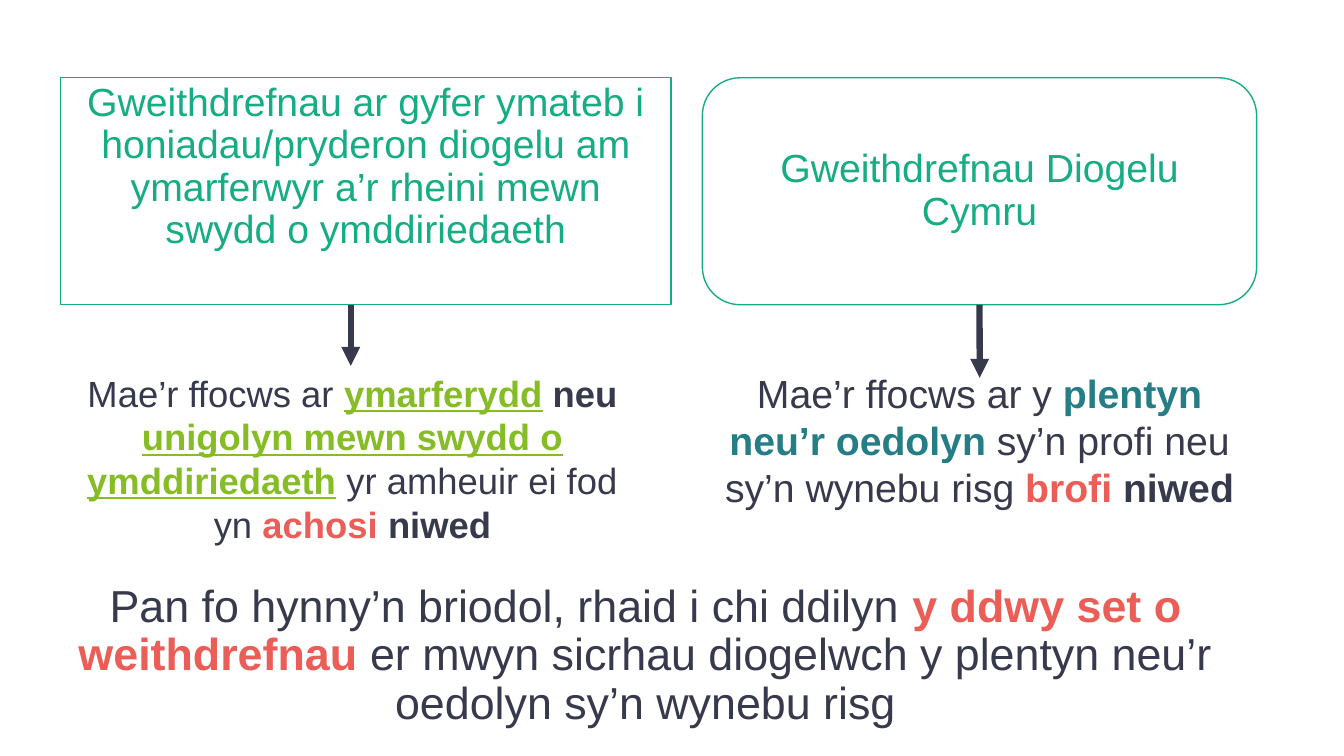
from lxml import etree
from pptx import Presentation
from pptx.dml.color import RGBColor
from pptx.enum.shapes import MSO_CONNECTOR as Connector, MSO_SHAPE as Preset
from pptx.enum.text import MSO_ANCHOR as Anchor, PP_ALIGN as Align
from pptx.oxml.ns import qn
from pptx.util import Cm, Pt

DARK, GREEN, LIME, TEAL, RED = "37394C", "16AD85", "86BC25", "257D86", "EB5E57"


def color(value):
    return RGBColor.from_string(value)


def write(shape, size, runs, spacing=1.0, anchor=Anchor.TOP):
    frame = shape.text_frame
    frame.word_wrap = True
    frame.vertical_anchor = anchor
    paragraph = frame.paragraphs[0]
    paragraph.alignment = Align.CENTER
    paragraph.line_spacing = spacing
    for text, text_color, style in runs:
        run = paragraph.add_run()
        run.text = text
        run.font.name = "Arial"
        run.font.size = Pt(size)
        run.font.color.rgb = color(text_color)
        run.font.bold = "b" in style
        run.font.underline = "u" in style


presentation = Presentation()
presentation.slide_width = Cm(33.87)
presentation.slide_height = Cm(19.05)
slide = presentation.slides.add_slide(presentation.slide_layouts[6])

texts = [
    (0.89, 14.58, 30.76, 5.03, 32, 0.9, [
        ("Pan fo hynny’n briodol, rhaid i chi ddilyn ", DARK, ""),
        ("y ddwy set o weithdrefnau ", RED, "b"),
        ("er mwyn sicrhau diogelwch y plentyn neu’r oedolyn sy’n wynebu risg", DARK, ""),
    ]),
    (1.9, 9.22, 13.97, 5.05, 26, 1.0, [
        ("Mae’r ffocws ar ", DARK, ""),
        ("ymarferydd", LIME, "bu"),
        (" neu ", DARK, "b"),
        ("unigolyn mewn swydd o ymddiriedaeth", LIME, "bu"),
        (" yr amheuir ei fod yn ", DARK, ""),
        ("achosi ", RED, "b"),
        ("niwed", DARK, "b"),
    ]),
    (17.7, 9.19, 13.97, 3.84, 28, 1.0, [
        ("Mae’r ffocws ar y ", DARK, ""),
        ("plentyn neu’r oedolyn ", TEAL, "b"),
        ("sy’n profi neu sy’n wynebu risg ", DARK, ""),
        ("brofi ", RED, "b"),
        ("niwed", DARK, "b"),
    ]),
]
for left, top, width, height, size, spacing, runs in texts:
    box = slide.shapes.add_textbox(Cm(left), Cm(top), Cm(width), Cm(height))
    write(box, size, runs, spacing)

box_top, box_height = 1.96, 5.72
procedures = [
    (Preset.ROUNDED_RECTANGLE, 17.7, 13.97, Anchor.MIDDLE, "Gweithdrefnau Diogelu Cymru"),
    (Preset.RECTANGLE, 1.52, 15.39, Anchor.TOP,
     "Gweithdrefnau ar gyfer ymateb i honiadau/pryderon diogelu am "
     "ymarferwyr a’r rheini mewn swydd o ymddiriedaeth"),
]
procedure_boxes = []
for preset, left, width, anchor, text in procedures:
    shape = slide.shapes.add_shape(preset, Cm(left), Cm(box_top), Cm(width), Cm(box_height))
    shape.shadow.inherit = False
    shape.fill.solid()
    shape.fill.fore_color.rgb = color("FFFFFF")
    shape.line.color.rgb = color(GREEN)
    shape.line.width = Pt(1)
    write(shape, 28, [(text, GREEN, "")], 0.9, anchor)
    procedure_boxes.append(shape)

arrows = []
for x, end in [(24.69, 9.52), (8.84, 9.22)]:
    arrow = slide.shapes.add_connector(
        Connector.STRAIGHT, Cm(x), Cm(box_top + box_height), Cm(x), Cm(end))
    arrow.line.color.rgb = color(DARK)
    arrow.line.width = Pt(4.5)
    etree.SubElement(arrow.line._get_or_add_ln(), qn("a:tailEnd"), type="triangle")
    etree.SubElement(arrow._element.spPr, qn("a:effectLst"))
    arrows.append(arrow)
arrows[0].begin_connect(procedure_boxes[0], 2)

presentation.save("out.pptx")
